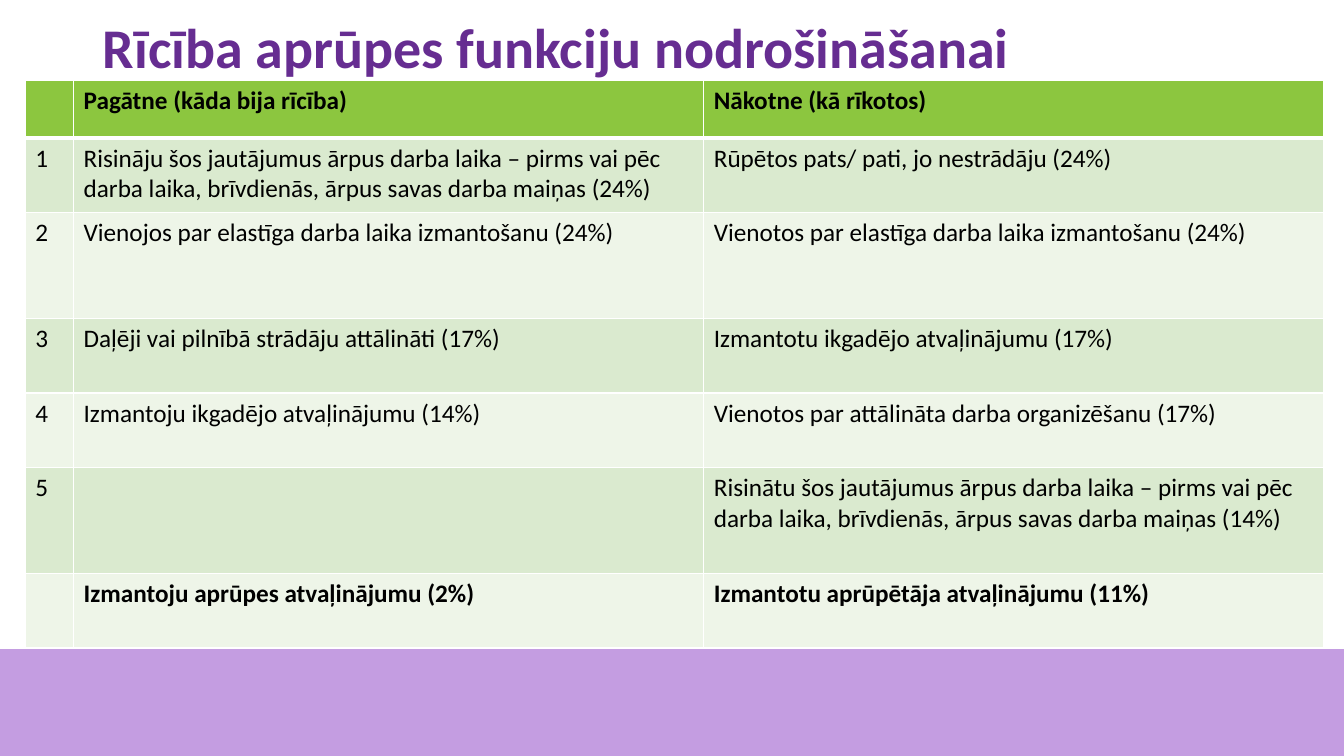
import pptx
import pptx.util
import pptx.dml.color
import pptx.enum.shapes
import pptx.enum.text
import pptx.oxml
import pptx.oxml.ns
from dataclasses import dataclass


@dataclass(frozen=True)
class Theme:
    font: str = "Calibri"
    title_size: int = 40
    table_size: int = 18
    title: str = "662D91"
    text: str = "000000"
    band: str = "C49DE1"
    header: str = "8CC63F"
    rows: tuple = ("DAEACF", "EEF5E8")
    border: str = "FFFFFF"


theme = Theme()
inches = pptx.util.Inches
color = pptx.dml.color.RGBColor.from_string


def style_text(para, size, shade, bold):
    for span in para.runs:
        span.font.name = theme.font
        span.font.size = pptx.util.Pt(size)
        span.font.color.rgb = color(shade)
        span.font.bold = bold


def add_border(cell, side, points):
    line = pptx.oxml.parse_xml(
        f'<a:{side} {pptx.oxml.ns.nsdecls("a")} w="{pptx.util.Pt(points)}">'
        f'<a:solidFill><a:srgbClr val="{theme.border}"/></a:solidFill></a:{side}>'
    )
    cell._tc.get_or_add_tcPr().append(line)


deck = pptx.Presentation()
deck.slide_width = inches(13.33)
deck.slide_height = inches(7.5)
page = deck.slides.add_slide(deck.slide_layouts[5])

band_top = inches(6.44)
band = page.shapes.add_shape(
    pptx.enum.shapes.MSO_SHAPE.RECTANGLE,
    0, band_top, deck.slide_width, deck.slide_height - band_top,
)
band.shadow.inherit = False
band.fill.solid()
band.fill.fore_color.rgb = color(theme.band)
band.line.fill.background()

title = page.shapes.title
title.left, title.top = inches(0.92), 0
title.width, title.height = inches(11.5), inches(0.99)
title.text_frame.text = "Rīcība aprūpes funkciju nodrošināšanai"
title.text_frame.vertical_anchor = pptx.enum.text.MSO_ANCHOR.MIDDLE
heading = title.text_frame.paragraphs[0]
heading.alignment = pptx.enum.text.PP_ALIGN.LEFT
heading.line_spacing = 0.9
style_text(heading, theme.title_size, theme.title, True)

answers = [
    ("", "Pagātne (kāda bija rīcība)", "Nākotne (kā rīkotos)"),
    ("1", "Risināju šos jautājumus ārpus darba laika – pirms vai pēc darba laika, brīvdienās, ārpus savas darba maiņas (24%)",
     "Rūpētos pats/ pati, jo nestrādāju (24%)"),
    ("2", "Vienojos par elastīga darba laika izmantošanu (24%)",
     "Vienotos par elastīga darba laika izmantošanu (24%)"),
    ("3", "Daļēji vai pilnībā strādāju attālināti (17%)",
     "Izmantotu ikgadējo atvaļinājumu (17%)"),
    ("4", "Izmantoju ikgadējo atvaļinājumu (14%)",
     "Vienotos par attālināta darba organizēšanu (17%)"),
    ("5", "", "Risinātu šos jautājumus ārpus darba laika – pirms vai pēc darba laika, brīvdienās, ārpus savas darba maiņas (14%)"),
    ("", "Izmantoju aprūpes atvaļinājumu (2%)",
     "Izmantotu aprūpētāja atvaļinājumu (11%)"),
]
column_widths = [0.48, 6.25, 6.15]
two_lines, three_lines = 0.74, 1.05
row_heights = [0.57, two_lines, three_lines, two_lines, two_lines, three_lines, two_lines]

table = page.shapes.add_table(
    len(answers), len(column_widths), inches(0.25), inches(0.8),
    inches(sum(column_widths)), inches(sum(row_heights)),
).table
for column, width in zip(table.columns, column_widths):
    column.width = inches(width)
for row, height in zip(table.rows, row_heights):
    row.height = inches(height)

last = len(answers) - 1
for index, answer in enumerate(answers):
    shade = theme.header if index == 0 else theme.rows[(index - 1) % 2]
    for position, words in enumerate(answer):
        cell = table.cell(index, position)
        cell.text_frame.text = words
        style_text(cell.text_frame.paragraphs[0], theme.table_size, theme.text, index in (0, last))
        add_border(cell, "lnL", 1)
        add_border(cell, "lnR", 1)
        add_border(cell, "lnT", 3 if index == 1 else 1)
        add_border(cell, "lnB", 3 if index == 0 else 1)
        cell.fill.solid()
        cell.fill.fore_color.rgb = color(shade)

deck.save("out.pptx")
